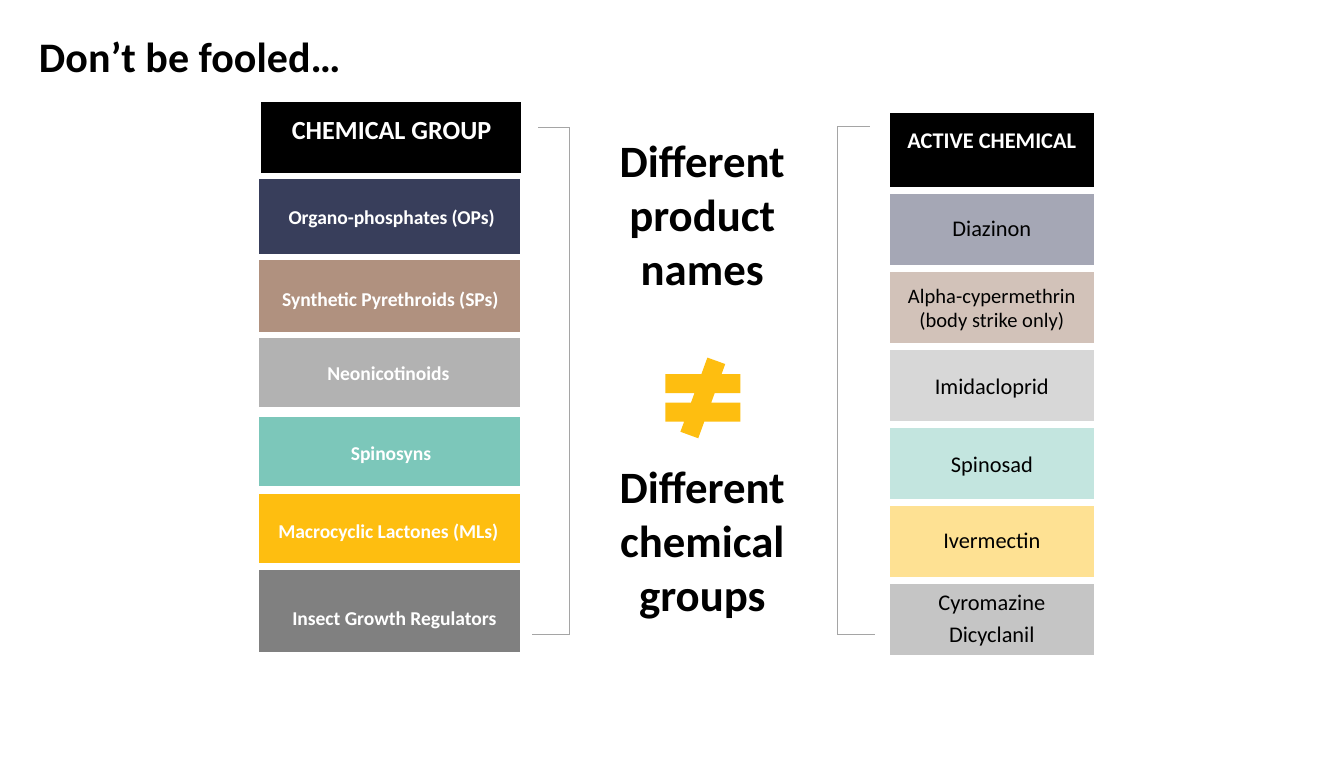
from dataclasses import dataclass

from lxml.etree import SubElement
from pptx import Presentation
from pptx.dml.color import RGBColor
from pptx.enum.shapes import MSO_CONNECTOR, MSO_SHAPE
from pptx.enum.text import MSO_ANCHOR, MSO_AUTO_SIZE, PP_ALIGN
from pptx.oxml.ns import qn
from pptx.slide import Slide
from pptx.util import Inches, Pt

BLACK = RGBColor(0x00, 0x00, 0x00)
WHITE = RGBColor(0xFF, 0xFF, 0xFF)
NAVY = RGBColor(0x38, 0x3E, 0x5B)
TAN = RGBColor(0xB0, 0x91, 0x7F)
BROWN = RGBColor(0x98, 0x73, 0x5E)
SILVER = RGBColor(0xB2, 0xB2, 0xB2)
TEAL = RGBColor(0x7C, 0xC7, 0xBA)
AMBER = RGBColor(0xFE, 0xBE, 0x10)
GRAY = RGBColor(0x80, 0x80, 0x80)
BRACKET_GRAY = RGBColor(0xA5, 0xA5, 0xA5)
FONT = "Calibri"


@dataclass
class Box:
    left: float
    top: float
    width: float
    height: float

    def lengths(self) -> list:
        return [Inches(value) for value in (self.left, self.top, self.width, self.height)]


@dataclass
class Label:
    text: str
    box: Box
    size: float
    color: RGBColor = WHITE
    bold: bool = True
    line_spacing: float = 1.0
    wrap: bool = True


@dataclass
class Tile:
    box: Box
    fill: RGBColor
    label: Label
    opacity: int = 100


@dataclass
class Bracket:
    spine: float
    top: float
    bottom: float
    top_end: float
    bottom_end: float


def format_paragraph(paragraph, size: float, color: RGBColor, bold: bool) -> None:
    for run in paragraph.runs:
        run.font.name = FONT
        run.font.size = Pt(size)
        run.font.bold = bold
        run.font.color.rgb = color


def add_label(slide: Slide, label: Label):
    text_frame = slide.shapes.add_textbox(*label.box.lengths()).text_frame
    text_frame.word_wrap = label.wrap
    text_frame.vertical_anchor = MSO_ANCHOR.MIDDLE
    text_frame.text = label.text
    for paragraph in text_frame.paragraphs:
        paragraph.alignment = PP_ALIGN.CENTER
        paragraph.line_spacing = label.line_spacing
        format_paragraph(paragraph, label.size, label.color, label.bold)
    return text_frame


def add_filled_shape(slide: Slide, kind: MSO_SHAPE, box: Box, fill: RGBColor):
    shape = slide.shapes.add_shape(kind, *box.lengths())
    shape.shadow.inherit = False
    shape.fill.solid()
    shape.fill.fore_color.rgb = fill
    shape.line.fill.background()
    return shape


def add_tile(slide: Slide, tile: Tile) -> None:
    shape = add_filled_shape(slide, MSO_SHAPE.RECTANGLE, tile.box, tile.fill)
    shape.line.color.rgb = WHITE
    shape.line.width = Pt(3)
    if tile.opacity < 100:
        color = shape.element.spPr.find(qn("a:solidFill")).find(qn("a:srgbClr"))
        SubElement(color, qn("a:alpha"), val=str(tile.opacity * 1000))
    add_label(slide, tile.label)


def add_bracket(slide: Slide, bracket: Bracket) -> None:
    group = slide.shapes.add_group_shape()
    top_corner = (bracket.spine, bracket.top)
    bottom_corner = (bracket.spine, bracket.bottom)
    for start, end in (
        (top_corner, bottom_corner),
        (top_corner, (bracket.top_end, bracket.top)),
        (bottom_corner, (bracket.bottom_end, bracket.bottom)),
    ):
        points = [Inches(value) for value in start + end]
        connector = group.shapes.add_connector(MSO_CONNECTOR.STRAIGHT, *points)
        connector.line.color.rgb = BRACKET_GRAY
        connector.line.width = Pt(0.5)
        SubElement(connector.element.spPr, qn("a:effectLst"))


def group_tile(text: str, fill: RGBColor, top: float, height: float, label_box: Box) -> Tile:
    return Tile(Box(1.91, top, 1.98, height), fill, Label(text, label_box, 10.5))


def active_tile(row: int, text: str, fill: RGBColor, opacity: int, label_top: float,
                label_height: float, size: float = 12, line_spacing: float = 1.2) -> Tile:
    label = Label(text, Box(6.64, label_top, 1.48, label_height), size, BLACK, False, line_spacing)
    return Tile(Box(6.6, 1.42 + 0.58 * row, 1.56, 0.57), fill, label, opacity)


TILES = [
    Tile(Box(1.92, 0.74, 1.98, 0.59), BLACK,
         Label("CHEMICAL GROUP", Box(1.96, 0.79, 1.91, 0.34), 14)),
    group_tile("Organo-phosphates (OPs)", NAVY, 1.31, 0.7, Box(1.95, 1.47, 1.93, 0.28)),
    group_tile("Synthetic Pyrethroids (SPs)", TAN, 1.91, 0.7, Box(1.96, 2.08, 1.89, 0.28)),
    group_tile("Neonicotinoids", SILVER, 2.49, 0.56, Box(1.79, 2.63, 2.2, 0.28)),
    group_tile("Spinosyns", TEAL, 3.08, 0.56, Box(1.91, 3.23, 2, 0.28)),
    group_tile("Macrocyclic Lactones (MLs)", AMBER, 3.65, 0.56, Box(1.92, 3.81, 1.94, 0.28)),
    group_tile("Insect Growth Regulators", GRAY, 4.22, 0.65, Box(1.97, 4.45, 1.93, 0.28)),
    Tile(Box(6.6, 0.82, 1.56, 0.59), BLACK,
         Label("ACTIVE CHEMICAL", Box(6.64, 0.89, 1.48, 0.3), 12, wrap=False)),
    active_tile(0, "Diazinon", NAVY, 45, 1.54, 0.3, line_spacing=1.0),
    active_tile(1, "Alpha-cypermethrin (body strike only)", BROWN, 43, 2.05, 0.47, 11, 1.0),
    active_tile(2, "Imidacloprid", SILVER, 51, 2.68, 0.33),
    active_tile(3, "Spinosad", TEAL, 45, 3.26, 0.33),
    active_tile(4, "Ivermectin", AMBER, 45, 3.83, 0.33),
    active_tile(5, "Cyromazine\vDicyclanil", GRAY, 45, 4.29, 0.57),
]

BRACKETS = [
    Bracket(4.24, 0.95, 4.72, 4, 3.96),
    Bracket(6.23, 0.94, 4.72, 6.47, 6.51),
]


def add_title(slide: Slide) -> None:
    title = slide.shapes.title
    title.left, title.top, title.width, title.height = Box(0.19, -0.01, 8.62, 0.9).lengths()
    text_frame = title.text_frame
    text_frame.text = "Don’t be fooled…"
    text_frame.auto_size = MSO_AUTO_SIZE.NONE
    text_frame.vertical_anchor = MSO_ANCHOR.MIDDLE
    paragraph = text_frame.paragraphs[0]
    paragraph.alignment = PP_ALIGN.LEFT
    paragraph.line_spacing = 0.9
    format_paragraph(paragraph, 22.5, BLACK, True)


def main() -> None:
    presentation = Presentation()
    presentation.slide_width = Inches(10)
    presentation.slide_height = Inches(5.63)
    slide = presentation.slides.add_slide(presentation.slide_layouts[5])
    add_title(slide)
    message = add_label(slide, Label("Different product names\nDifferent chemical groups",
                                     Box(4.38, 0.93, 1.69, 3.74), 24, BLACK))
    message.paragraphs[1].space_before = Pt(88)
    for bracket in BRACKETS:
        add_bracket(slide, bracket)
    add_filled_shape(slide, MSO_SHAPE.MATH_NOT_EQUAL, Box(4.85, 2.66, 0.76, 0.6), AMBER)
    for tile in TILES:
        add_tile(slide, tile)
    presentation.save("out.pptx")


if __name__ == "__main__":
    main()
